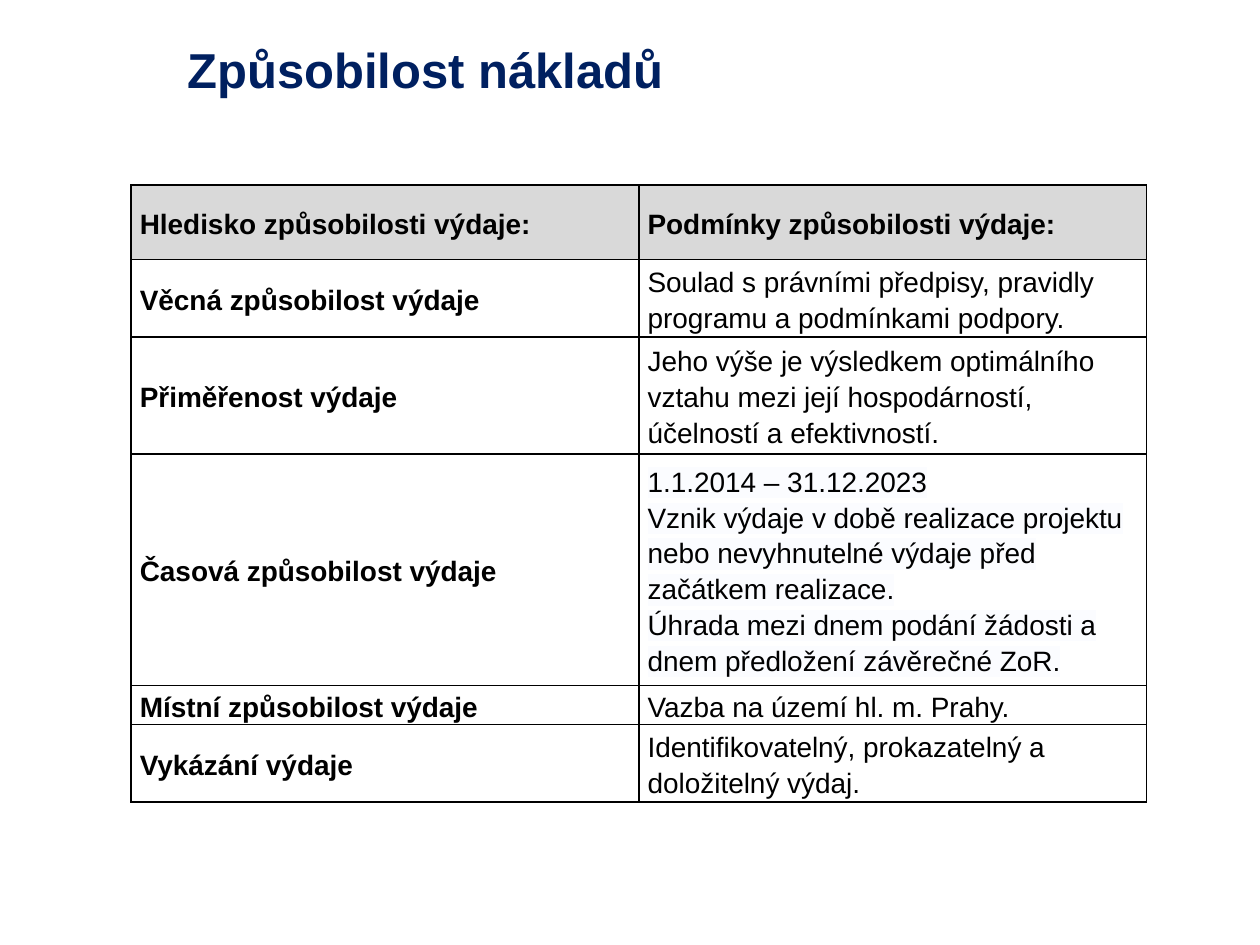
"""Build a slide with a table of cost eligibility conditions."""
from lxml import etree
from pptx import Presentation
from pptx.dml.color import RGBColor
from pptx.enum.text import MSO_ANCHOR
from pptx.oxml.ns import qn
from pptx.util import Inches, Pt

MIDDLE = MSO_ANCHOR.MIDDLE

THEME = {
    "font": "Arial", "title_size": 28, "body_size": 16,
    "title": "002060", "text": "000000", "border": "000000",
    "header_fill": "D9D9D9", "body_fill": "FFFFFF", "highlight": "FBFCFF",
}
TITLE = "Způsobilost nákladů"
CRITERIA = [
    ("Hledisko způsobilosti výdaje:", ["Podmínky způsobilosti výdaje:"], 0.59),
    ("Věcná způsobilost výdaje",
     ["Soulad s právními předpisy, pravidly programu a podmínkami podpory."], 0.61),
    ("Přiměřenost výdaje",
     ["Jeho výše je výsledkem optimálního vztahu mezi její hospodárností, "
      "účelností a efektivností."], 0.93),
    ("Časová způsobilost výdaje",
     ["1.1.2014 – 31.12.2023",
      "Vznik výdaje v době realizace projektu nebo nevyhnutelné výdaje před "
      "začátkem realizace.",
      "Úhrada mezi dnem podání žádosti a dnem předložení závěrečné ZoR."], 1.7),
    ("Místní způsobilost výdaje", ["Vazba na území hl. m. Prahy."], 0.31),
    ("Vykázání výdaje",
     ["Identifikovatelný, prokazatelný a doložitelný výdaj."], 0.61),
]
TABLE_LEFT, TABLE_TOP, COLUMN_WIDTH = 1.04, 1.47, 4.03


def style(paragraph, size, color, bold, spacing):
    font = paragraph.font
    font.name, font.size, font.bold = THEME["font"], Pt(size), bold
    font.color.rgb = RGBColor.from_string(color)
    paragraph.line_spacing = spacing


def highlight(run):
    mark = etree.SubElement(run.font._element, qn("a:highlight"))
    etree.SubElement(mark, qn("a:srgbClr"), val=THEME["highlight"])


def add_borders(cell):
    properties = cell._tc.get_or_add_tcPr()
    for position, side in enumerate(("lnL", "lnR", "lnT", "lnB")):
        line = etree.Element(qn(f"a:{side}"), w=str(Pt(1)))
        fill = etree.SubElement(line, qn("a:solidFill"))
        etree.SubElement(fill, qn("a:srgbClr"), val=THEME["border"])
        properties.insert(position, line)


def fill_cell(cell, paragraphs, fill, bold):
    cell.margin_left = cell.margin_right = Inches(0.07)
    cell.margin_top = cell.margin_bottom = 0
    cell.vertical_anchor = MIDDLE
    cell.fill.solid()
    cell.fill.fore_color.rgb = RGBColor.from_string(fill)
    cell.text = "\n".join(paragraphs)
    for paragraph in cell.text_frame.paragraphs:
        style(paragraph, THEME["body_size"], THEME["text"], bold, 1.15)
        if len(paragraphs) > 1:
            highlight(paragraph.runs[0])
    add_borders(cell)


def add_title(slide):
    heading = slide.shapes.add_textbox(
        Inches(1.39), Inches(0.27), Inches(7.92), Inches(0.61)).text_frame
    heading.word_wrap = True
    heading.vertical_anchor = MIDDLE
    heading.text = TITLE
    style(heading.paragraphs[0], THEME["title_size"], THEME["title"], True, 0.9)


def add_criteria(slide):
    height = sum(row_height for _, _, row_height in CRITERIA)
    table = slide.shapes.add_table(
        len(CRITERIA), 2, Inches(TABLE_LEFT), Inches(TABLE_TOP),
        Inches(2 * COLUMN_WIDTH), Inches(height)).table
    table.first_row = table.horz_banding = False
    for index, (criterion, conditions, row_height) in enumerate(CRITERIA):
        is_header = index == 0
        fill = THEME["header_fill" if is_header else "body_fill"]
        table.rows[index].height = Inches(row_height)
        fill_cell(table.cell(index, 0), [criterion], fill, True)
        fill_cell(table.cell(index, 1), conditions, fill, is_header)


def main():
    presentation = Presentation()
    presentation.slide_width, presentation.slide_height = Inches(10), Inches(7.5)
    slide = presentation.slides.add_slide(presentation.slide_layouts[6])
    add_title(slide)
    add_criteria(slide)
    presentation.save("out.pptx")


if __name__ == "__main__":
    main()
